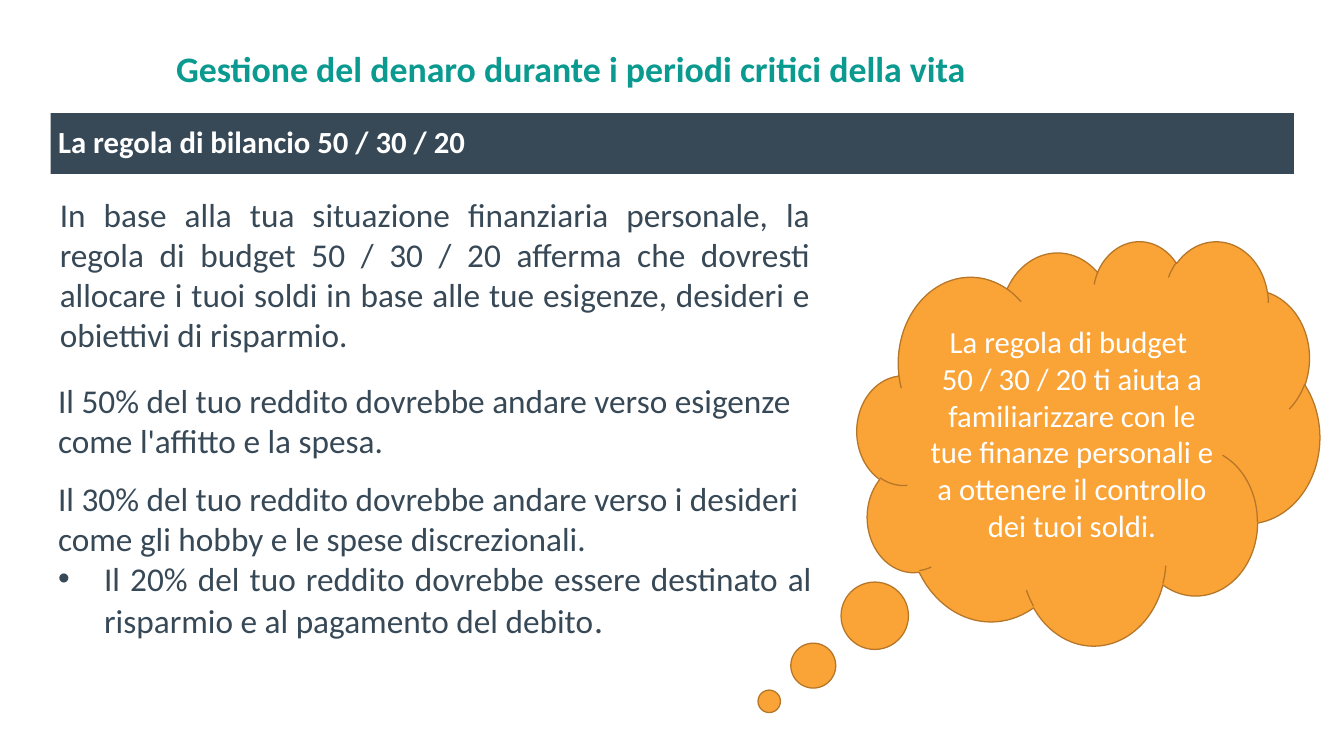
from dataclasses import dataclass

from lxml import etree
from pptx import Presentation
from pptx import util as u
from pptx.dml.color import RGBColor
from pptx.enum import shapes, text
from pptx.oxml import ns

# Content
TITLE = "Gestione del denaro durante i periodi critici della vita"
HEADING = "La regola di bilancio 50 / 30 / 20"
INTRO = ("In base alla tua situazione finanziaria personale, la regola di budget "
         "50 / 30 / 20 afferma che dovresti allocare i tuoi soldi in base alle tue "
         "esigenze, desideri e obiettivi di risparmio.")
NEEDS = "Il 50% del tuo reddito dovrebbe andare verso esigenze come l'affitto e la spesa."
WANTS = ("Il 30% del tuo reddito dovrebbe andare verso i desideri come gli hobby "
         "e le spese discrezionali.")
SAVINGS = ("Il 20% del tuo reddito dovrebbe essere destinato al risparmio "
           "e al pagamento del debito")
ADVICE = ["La regola di budget ",
          "50 / 30 / 20 ti aiuta a familiarizzare con le tue finanze personali "
          "e a ottenere il controllo dei tuoi soldi."]


@dataclass(frozen=True)
class Theme:
    font: str = "Calibri"
    teal: str = "0A9A8F"
    slate: str = "374856"
    orange: str = "FAA337"
    outline: str = "B67628"
    white: str = "FFFFFF"
    title: int = 28
    body: int = 26
    label: int = 24
    stop: int = 28


THEME = Theme()
ALIGN = text.PP_ALIGN
PER_INCH = 96
SLIDE_WIDTH, SLIDE_HEIGHT = 1400 / PER_INCH, 788 / PER_INCH
LEFT, COLUMN, BAR = 0.55, 8.35, 13.49
INDENT = 0.5


def box(left, top, width, height):
    return [u.Inches(v) for v in (left, top, width, height)]


def set_frame(frame, side=0.08, anchor=text.MSO_ANCHOR.TOP):
    frame.word_wrap = True
    frame.auto_size = text.MSO_AUTO_SIZE.NONE
    frame.vertical_anchor = anchor
    frame.margin_left = frame.margin_right = u.Inches(side)
    frame.margin_top = frame.margin_bottom = u.Inches(0.05)


def write(paragraph, words, size=THEME.body, color=THEME.slate, bold=False,
          align=ALIGN.LEFT, spacing=1.0, before=0):
    paragraph.alignment = align
    paragraph.line_spacing = spacing
    paragraph.space_before = u.Pt(before)
    paragraph.space_after = u.Pt(0)
    run = paragraph.add_run()
    run.text = words
    run.font.name = THEME.font
    run.font.size = u.Pt(size)
    run.font.bold = bold
    run.font.color.rgb = RGBColor.from_string(color)


def add_bullet(paragraph):
    props = paragraph._p.get_or_add_pPr()
    props.set("marL", str(u.Inches(INDENT)))
    props.set("indent", str(-u.Inches(INDENT)))
    etree.SubElement(props, ns.qn("a:buFont"), typeface="Arial")
    etree.SubElement(props, ns.qn("a:buChar"), char="•")


def add_filled(slide, kind, bounds, fill):
    shape = slide.shapes.add_shape(kind, *bounds)
    shape.shadow.inherit = False
    shape.fill.solid()
    shape.fill.fore_color.rgb = RGBColor.from_string(fill)
    return shape


def main():
    deck = Presentation()
    deck.slide_width = u.Inches(SLIDE_WIDTH)
    deck.slide_height = u.Inches(SLIDE_HEIGHT)
    slide = deck.slides.add_slide(deck.slide_layouts[5])
    middle = text.MSO_ANCHOR.MIDDLE

    # Title
    title = slide.shapes.title
    title.left, title.top, title.width, title.height = box(1.83, 0.37, 9.98, 0.79)
    set_frame(title.text_frame, anchor=middle)
    write(title.text_frame.paragraphs[0], TITLE, size=THEME.title,
          color=THEME.teal, bold=True, spacing=0.9)

    # Heading bar
    heading = add_filled(slide, shapes.MSO_SHAPE.RECTANGLE,
                         box(LEFT, 1.23, BAR, 0.66), THEME.slate)
    heading.line.fill.background()
    set_frame(heading.text_frame, anchor=middle)
    write(heading.text_frame.paragraphs[0], HEADING, size=THEME.label,
          color=THEME.white, bold=True, spacing=0.9)

    # Introduction
    intro = slide.shapes.add_textbox(*box(LEFT, 2.06, COLUMN, 1.85)).text_frame
    set_frame(intro, side=0.1)
    write(intro.paragraphs[0], INTRO, align=ALIGN.JUSTIFY)

    # Three shares of income
    shares = slide.shapes.add_textbox(*box(LEFT, 4.08, COLUMN, 3.12)).text_frame
    set_frame(shares)
    write(shares.paragraphs[0], NEEDS)
    write(shares.add_paragraph(), WANTS, before=14)
    savings = shares.add_paragraph()
    write(savings, SAVINGS, align=ALIGN.JUSTIFY)
    write(savings, ".", size=THEME.stop, align=ALIGN.JUSTIFY)
    add_bullet(savings)

    # Advice cloud
    cloud = add_filled(slide, shapes.MSO_SHAPE.CLOUD_CALLOUT,
                       box(9.3, 2.61, 5.02, 4.39), THEME.orange)
    cloud.adjustments[0], cloud.adjustments[1] = -0.69, 0.64
    cloud.line.color.rgb = RGBColor.from_string(THEME.outline)
    cloud.line.width = u.Pt(1)
    set_frame(cloud.text_frame, side=0.1, anchor=middle)
    for i, words in enumerate(ADVICE):
        line = cloud.text_frame.add_paragraph() if i else cloud.text_frame.paragraphs[0]
        write(line, words, size=THEME.label, color=THEME.white, align=ALIGN.CENTER)

    deck.save("out.pptx")


if __name__ == "__main__":
    main()
